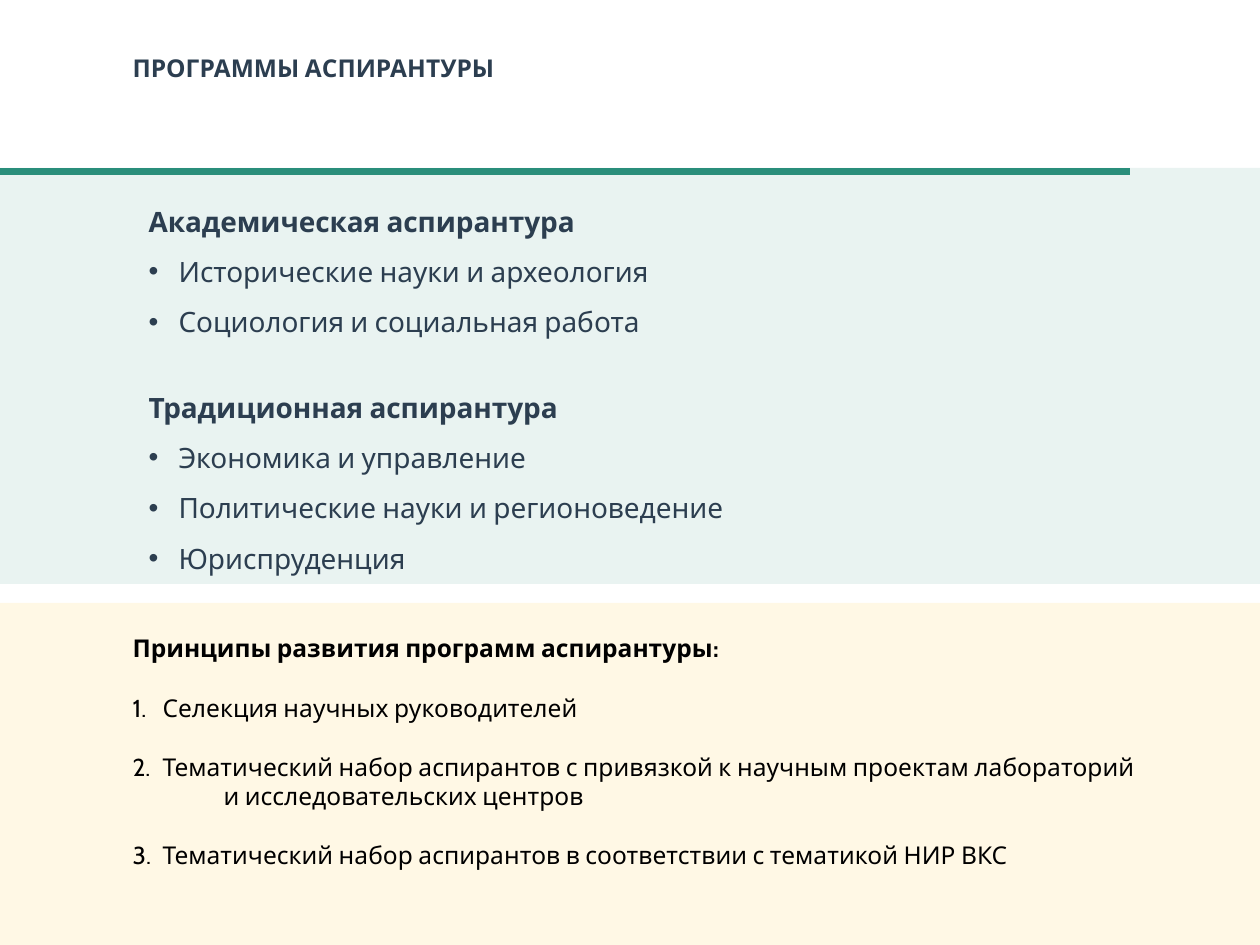
from lxml import etree
from pptx import Presentation
from pptx.dml.color import RGBColor
from pptx.enum.shapes import MSO_SHAPE
from pptx.enum.text import MSO_ANCHOR, MSO_AUTO_SIZE, PP_ALIGN
from pptx.oxml.ns import qn
from pptx.util import Emu, Pt

RECTANGLE = MSO_SHAPE.RECTANGLE
TOP = MSO_ANCHOR.TOP
GROW = MSO_AUTO_SIZE.SHAPE_TO_FIT_TEXT
LEFT = PP_ALIGN.LEFT

GREEN = RGBColor(0x2A, 0x8E, 0x7B)
AMBER = RGBColor(0xFF, 0xC0, 0x00)
NAVY = RGBColor(0x2C, 0x3E, 0x50)
BLACK = RGBColor(0x00, 0x00, 0x00)

WIDTH, HEIGHT = 1260, 945
COMPARISON_LAYOUT = 4
HANGING = 30
CONTINUATION = 91


def px(length):
    return Emu(round(length * 914400 / 126))


class SlideBuilder:
    font_name = "Cabin"

    def __init__(self, slide):
        self.slide = slide
        self.placeholders = {
            shape.placeholder_format.idx: shape for shape in slide.placeholders
        }

    def panel(self, left, top, width, height, color, opacity=100):
        shape = self.slide.shapes.add_shape(
            RECTANGLE, px(left), px(top), px(width), px(height)
        )
        shape.shadow.inherit = False
        shape.fill.solid()
        shape.fill.fore_color.rgb = color
        shape.line.fill.background()
        if opacity < 100:
            tint = shape.fill._xPr.find(".//" + qn("a:srgbClr"))
            etree.SubElement(tint, qn("a:alpha"), val=str(opacity * 1000))

    def text_frame(self, index, left, top, width, height):
        shape = self.placeholders.pop(index)
        self.slide.shapes._spTree.append(shape._element)
        shape.left, shape.top = px(left), px(top)
        shape.width, shape.height = px(width), px(height)
        frame = shape.text_frame
        frame.word_wrap = True
        frame.vertical_anchor = TOP
        frame.auto_size = GROW
        return frame

    def paragraph(self, frame, text, size, color, bold=False, spacing=1.0, before=0):
        first = frame.paragraphs[0]
        paragraph = frame.add_paragraph() if first.runs else first
        paragraph.alignment = LEFT
        paragraph.line_spacing = spacing
        paragraph.space_before = Pt(before)
        paragraph.space_after = Pt(0)
        for number, line in enumerate(text.split("\n")):
            if number:
                paragraph.add_line_break()
            run = paragraph.add_run()
            run.text = line
            run.font.name = self.font_name
            run.font.size = Pt(size)
            run.font.bold = bold
            run.font.color.rgb = color
        return paragraph

    def marker(self, paragraph, tag, hanging=HANGING, **attributes):
        properties = paragraph._p.get_or_add_pPr()
        properties.set("marL", str(px(hanging)))
        properties.set("indent", str(-px(hanging)))
        if tag == "a:buChar":
            etree.SubElement(properties, qn("a:buFont"), typeface="Arial")
        elif tag == "a:buAutoNum":
            etree.SubElement(properties, qn("a:buFont"), typeface=self.font_name)
        etree.SubElement(properties, qn(tag), **attributes)
        return properties

    def title(self, text, *box):
        frame = self.text_frame(0, *box)
        self.paragraph(frame, text, 14, NAVY, bold=True)

    def bullet_list(self, index, heading, items, *box):
        frame = self.text_frame(index, *box)
        paragraph = self.paragraph(frame, heading, 16, NAVY, bold=True, spacing=1.5)
        self.marker(paragraph, "a:buNone", hanging=0)
        for item in items:
            paragraph = self.paragraph(frame, item, 16, NAVY, spacing=1.5)
            self.marker(paragraph, "a:buChar", char="•")

    def numbered_list(self, index, heading, items, *box):
        frame = self.text_frame(index, *box)
        paragraph = self.paragraph(frame, heading, 14, BLACK, bold=True)
        self.marker(paragraph, "a:buNone", hanging=0)
        for number, item in enumerate(items, 1):
            paragraph = self.paragraph(frame, item, 14, BLACK, before=17)
            properties = self.marker(
                paragraph, "a:buAutoNum", type="arabicPeriod", startAt=str(number)
            )
            tabs = etree.SubElement(properties, qn("a:tabLst"))
            etree.SubElement(tabs, qn("a:tab"), pos=str(px(CONTINUATION)), algn="l")

    def remove_empty_placeholders(self):
        for shape in self.placeholders.values():
            shape._element.getparent().remove(shape._element)


def main():
    presentation = Presentation()
    presentation.slide_width, presentation.slide_height = px(WIDTH), px(HEIGHT)
    layout = presentation.slide_layouts[COMPARISON_LAYOUT]
    builder = SlideBuilder(presentation.slides.add_slide(layout))

    builder.panel(0, 168, WIDTH, 416, GREEN, opacity=10)
    builder.panel(0, 168, 1130, 7, GREEN)
    builder.panel(0, 603, WIDTH, 342, AMBER, opacity=10)

    builder.title("ПРОГРАММЫ АСПИРАНТУРЫ", 120, 47, 793, 43)
    builder.bullet_list(
        1,
        "Академическая аспирантура",
        ["Исторические науки и археология", "Социология и социальная работа"],
        136, 181, 914, 165,
    )
    builder.bullet_list(
        2,
        "Традиционная аспирантура",
        [
            "Экономика и управление",
            "Политические науки и регионоведение",
            "Юриспруденция",
        ],
        136, 367, 914, 217,
    )
    builder.numbered_list(
        3,
        "Принципы развития программ аспирантуры:",
        [
            "Селекция научных руководителей",
            "Тематический набор аспирантов с привязкой к научным проектам лабораторий"
            "\n\tи исследовательских центров",
            "Тематический набор аспирантов в соответствии с тематикой НИР ВКС",
        ],
        120, 627, 1068, 249,
    )
    builder.remove_empty_placeholders()
    presentation.save("out.pptx")


if __name__ == "__main__":
    main()
